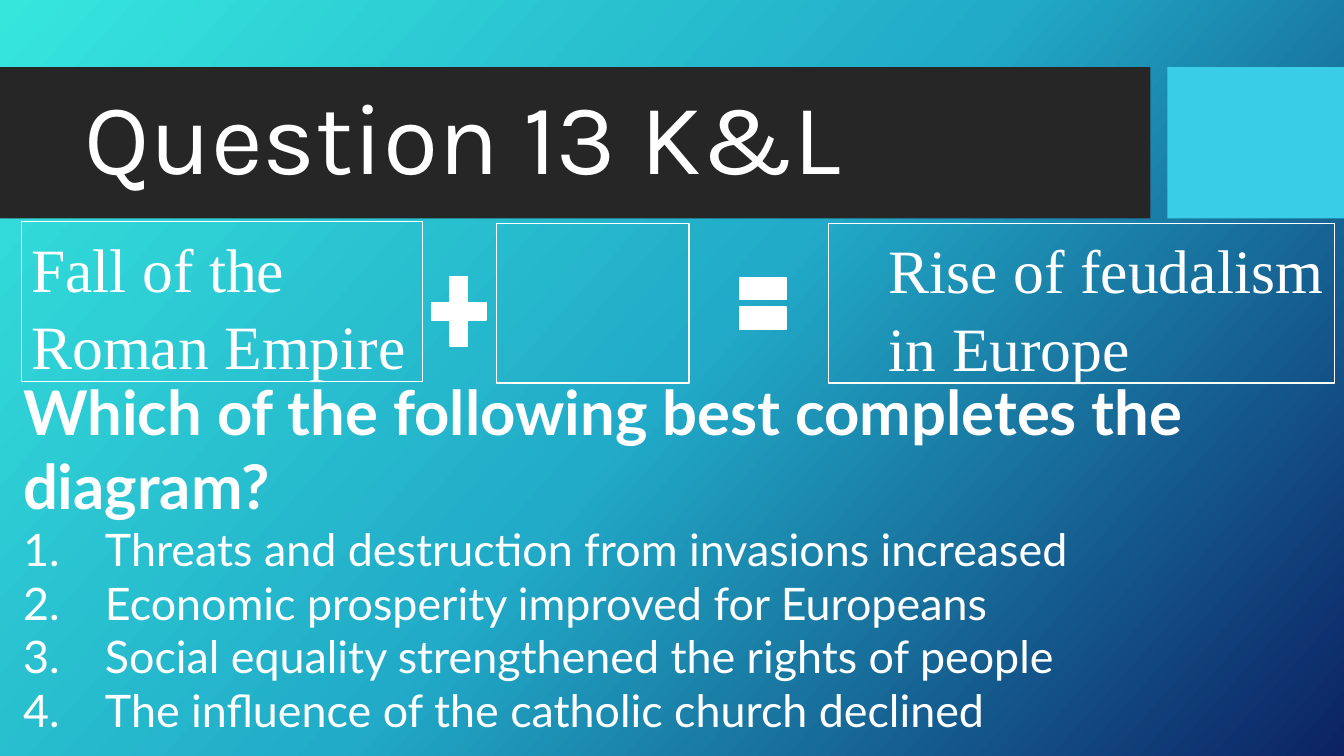
"""Build the quiz slide on feudalism with its cause diagram and answer choices."""
from copy import deepcopy

from lxml.etree import SubElement
from pptx import Presentation
from pptx.dml.color import RGBColor
from pptx.enum.shapes import MSO_SHAPE as Preset
from pptx.enum.text import MSO_ANCHOR as Anchor, PP_ALIGN as Align
from pptx.oxml.ns import qn
from pptx.util import Pt

WHITE = RGBColor(0xFF, 0xFF, 0xFF)
BAND = RGBColor(0x26, 0x26, 0x26)
ACCENT = RGBColor(0x39, 0xCD, 0xE7)
GRADIENT = (
    (0, RGBColor(0x36, 0xE6, 0xDD)),
    (0.5, RGBColor(0x21, 0xAB, 0xC8)),
    (1, RGBColor(0x0C, 0x22, 0x63)),
)
CHOICES = (
    "Threats and destruction from invasions increased",
    "Economic prosperity improved for Europeans",
    "Social equality strengthened the rights of people",
    "The influence of the catholic church declined",
)


class QuizSlide:
    """Hold the quiz style and the slide being drawn."""

    title_font, body_font, diagram_font = "Karla", "Lato", "Times New Roman"
    diagram_height = 113.8

    def __init__(self, presentation):
        self.slide = presentation.slides.add_slide(presentation.slide_layouts[6])

    def background(self, stops, angle):
        fill = self.slide.background.fill
        fill.gradient()
        fill.gradient_angle = angle
        stop_list = next(self.slide.element.iter(qn("a:gsLst")))
        stop_list.append(deepcopy(stop_list[0]))
        for stop, (position, color) in zip(fill.gradient_stops, stops):
            stop.position = position
            stop.color.rgb = color

    def shape(self, preset, left, top, width, height, fill=None, line=None):
        shape = self.slide.shapes.add_shape(
            preset, Pt(left), Pt(top), Pt(width), Pt(height))
        shape.shadow.inherit = False
        if fill is None:
            shape.fill.background()
        else:
            shape.fill.solid()
            shape.fill.fore_color.rgb = fill
        if line is None:
            shape.line.fill.background()
        else:
            shape.line.color.rgb = WHITE
            shape.line.width = Pt(line)
        return shape

    def text_box(self, left, top, width, height, anchor=Anchor.TOP):
        frame = self.slide.shapes.add_textbox(
            Pt(left), Pt(top), Pt(width), Pt(height)).text_frame
        frame.word_wrap = True
        frame.vertical_anchor = anchor
        return frame

    def set_text(self, paragraph, text, font, size, bold=False,
                 margin=0, numbered=False, spacing=1.0):
        paragraph.text = text
        paragraph.alignment = Align.LEFT
        paragraph.line_spacing = spacing
        properties = paragraph._p.get_or_add_pPr()
        properties.set("marL", str(Pt(margin)))
        properties.set("indent", str(Pt(-margin if numbered else 0)))
        if numbered:
            SubElement(properties, qn("a:buFont"), typeface="+mj-lt")
            SubElement(properties, qn("a:buAutoNum"), type="arabicPeriod")
        paragraph.font.name = font
        paragraph.font.size = Pt(size)
        paragraph.font.bold = bold
        paragraph.font.color.rgb = WHITE

    def title(self, text):
        frame = self.text_box(53.3, 59, 756.7, 85, Anchor.MIDDLE)
        self.set_text(frame.paragraphs[0], text, self.title_font, 72, spacing=0.9)

    def diagram_box(self, left, top, width, text=None, margin=0, line=0.75):
        box = self.shape(Preset.RECTANGLE, left, top, width,
                         self.diagram_height, line=line)
        if text:
            box.text_frame.vertical_anchor = Anchor.TOP
            self.set_text(box.text_frame.paragraphs[0], text, self.diagram_font,
                          44, margin=margin, spacing=1.05)

    def question(self, text, choices):
        frame = self.text_box(9.4, 263.5, 950.4, 269.3)
        self.set_text(frame.paragraphs[0], text, self.body_font, 44, bold=True)
        for choice in choices:
            self.set_text(frame.add_paragraph(), choice, self.body_font, 32,
                          margin=58.5, numbered=True)


def main():
    presentation = Presentation()
    presentation.slide_width, presentation.slide_height = Pt(960), Pt(540)
    quiz = QuizSlide(presentation)
    quiz.background(GRADIENT, 318)
    quiz.shape(Preset.RECTANGLE, 0, 48, 821.8, 108, fill=BAND)
    quiz.shape(Preset.RECTANGLE, 833.8, 48, 126.2, 108, fill=ACCENT)
    quiz.title("Question 13 K&L")
    quiz.diagram_box(15.3, 158.4, 286.3, "Fall of the Roman Empire")
    quiz.diagram_box(591.8, 159.8, 361.4, "Rise of feudalism in Europe", margin=36)
    quiz.diagram_box(354.8, 159.8, 137.3, line=1)
    quiz.question("Which of the following best completes the diagram?", CHOICES)
    quiz.shape(Preset.MATH_PLUS, 301, 188.6, 53.3, 67.7, fill=WHITE, line=1)
    equals = quiz.shape(Preset.MATH_EQUAL, 522.7, 182.9, 44.6, 67.7,
                        fill=WHITE, line=1)
    equals.adjustments[0], equals.adjustments[1] = 0.235, 0.078
    presentation.save("out.pptx")


if __name__ == "__main__":
    main()
